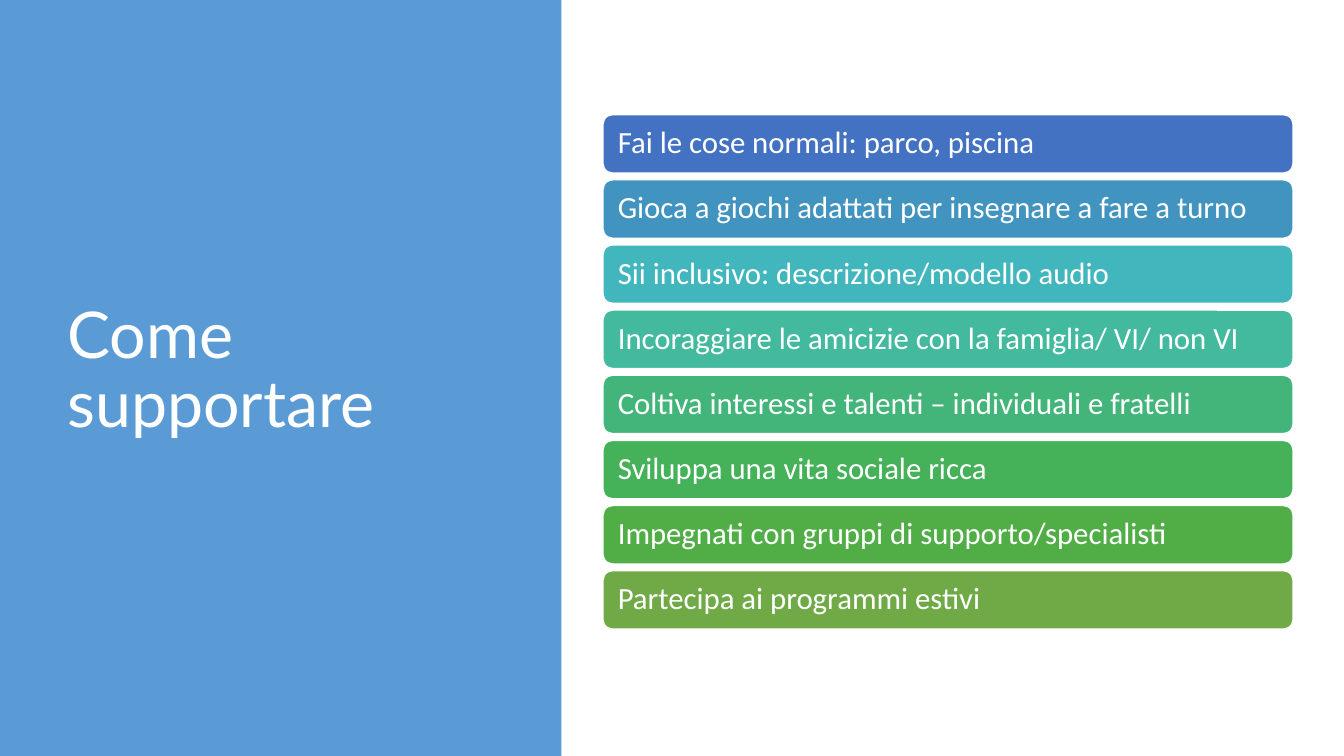
import pptx
import pptx.util
import pptx.dml.color
import pptx.enum.shapes
import pptx.enum.text

Pt = pptx.util.Pt
SHAPE = pptx.enum.shapes.MSO_SHAPE
ALIGN = pptx.enum.text.PP_ALIGN
ANCHOR = pptx.enum.text.MSO_ANCHOR

COLORS = {
    "panel": "5B9BD5",
    "white": "FFFFFF",
    "bars": ["4372C3", "4294C0", "42B6BD", "43B99E",
             "44B57A", "45B158", "51AE46", "6FAA47"],
}
TITLE = "Come supportare"
TIPS = [
    "Fai le cose normali: parco, piscina",
    "Gioca a giochi adattati per insegnare a fare a turno",
    "Sii inclusivo: descrizione/modello audio",
    "Incoraggiare le amicizie con la famiglia/ VI/ non VI",
    "Coltiva interessi e talenti – individuali e fratelli",
    "Sviluppa una vita sociale ricca",
    "Impegnati con gruppi di supporto/specialisti",
    "Partecipa ai programmi estivi",
]


def rgb(value):
    return pptx.dml.color.RGBColor.from_string(value)


def apply(obj, formats):
    for name, value in formats.items():
        setattr(obj, name, value)


def write(sp, text, font, size, inset_x, inset_y):
    tf = sp.text_frame
    apply(tf, {
        "text": text, "word_wrap": True, "vertical_anchor": ANCHOR.MIDDLE,
        "auto_size": pptx.enum.text.MSO_AUTO_SIZE.NONE,
        "margin_left": Pt(inset_x), "margin_right": Pt(inset_x),
        "margin_top": Pt(inset_y), "margin_bottom": Pt(inset_y),
    })
    p = tf.paragraphs[0]
    apply(p, {"alignment": ALIGN.LEFT, "line_spacing": 0.9})
    r = p.runs[0]
    apply(r.font, {"name": font, "size": Pt(size)})
    r.font.color.rgb = rgb(COLORS["white"])


def add_block(s, kind, box, color):
    sp = s.shapes.add_shape(kind, *map(Pt, box))
    sp.shadow.inherit = False
    sp.fill.solid()
    sp.fill.fore_color.rgb = rgb(color)
    sp.line.fill.background()
    return sp


def title_panel(s, x, y, w, h):
    # Panel goes behind the title placeholder
    panel = add_block(s, SHAPE.RECTANGLE, (x, y, w, h), COLORS["panel"])
    title = s.shapes.title
    title._element.addprevious(panel._element)
    apply(title, {"left": Pt(x + 41), "top": Pt(y + 49),
                  "width": Pt(w - 68.4), "height": Pt(h - 106.6)})
    write(title, TITLE, "Lato", 46, 7.2, 3.6)


def tip_list(s, x, y, w, h):
    # Equal bars with a fixed gap fill the box
    gap = 4.75
    bar_h = (h - gap * (len(TIPS) - 1)) / len(TIPS)
    for i, (tip, color) in enumerate(zip(TIPS, COLORS["bars"])):
        box = (x, y + i * (bar_h + gap), w, bar_h)
        bar = add_block(s, SHAPE.ROUNDED_RECTANGLE, box, color)
        bar.line.color.rgb = rgb(COLORS["white"])
        bar.line.width = Pt(1)
        write(bar, tip, "Calibri", 22, 8.6, 6)


def main():
    prs = pptx.Presentation()
    prs.slide_width, prs.slide_height = Pt(960), Pt(540)
    s = prs.slides.add_slide(prs.slide_layouts.get_by_name("Title Only"))
    title_panel(s, 0, 0, 401, 540)
    tip_list(s, 430.7, 81.9, 493, 367.5)
    prs.save("out.pptx")


if __name__ == "__main__":
    main()
